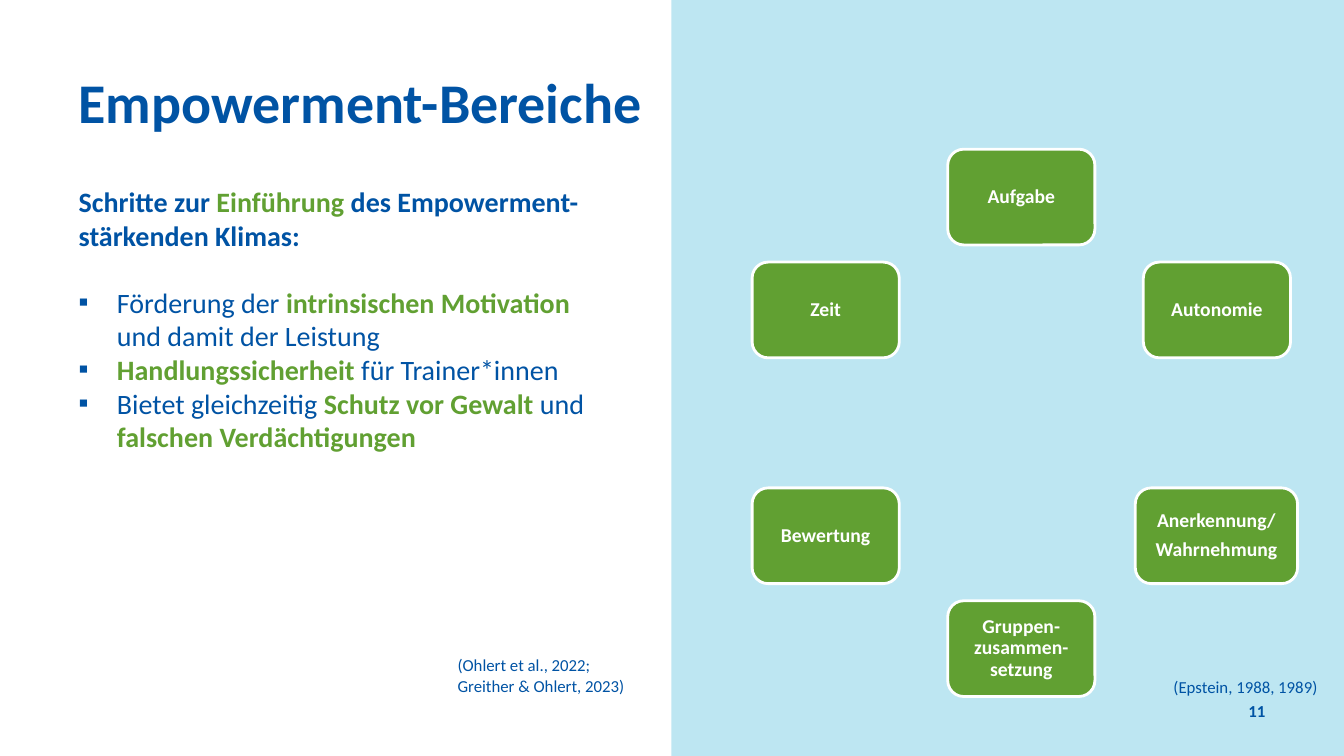
from math import cos, radians, sin

from lxml.etree import SubElement
from pptx import Presentation
from pptx.dml.color import RGBColor
from pptx.enum.shapes import MSO_SHAPE
from pptx.enum.text import MSO_ANCHOR, MSO_AUTO_SIZE, PP_ALIGN
from pptx.oxml.ns import qn
from pptx.util import Pt

PX = 9144  # 100 px to the inch
BLUE, GREEN, PALE, WHITE = "0053A4", "61A032", "BDE6F2", "FFFFFF"


def colour(value):
    return RGBColor.from_string(value)


def px(*lengths):
    return [round(length) * PX for length in lengths]


class SlideBuilder:
    font = "Calibri"

    def __init__(self, deck):
        self.page = deck.slides.add_slide(deck.slide_layouts[1])

    def style(self, para, size, ink=BLUE, bold=False, align=PP_ALIGN.LEFT):
        para.alignment = align
        para.font.name = self.font
        para.font.size = Pt(size)
        para.font.bold = bold
        para.font.color.rgb = colour(ink)

    def place(self, shape, area):
        shape.left, shape.top, shape.width, shape.height = px(*area)
        shape.text_frame.auto_size = MSO_AUTO_SIZE.NONE

    def panel(self, area):
        panel = self.page.shapes.add_shape(MSO_SHAPE.RECTANGLE, *px(*area))
        panel.shadow.inherit = False
        panel.fill.solid()
        panel.fill.fore_color.rgb = colour(PALE)
        panel.line.fill.background()
        self.page.shapes._spTree.insert(2, panel._element)  # behind the placeholders

    def title(self, text, area):
        title = self.page.shapes.title
        self.place(title, area)
        title.text_frame.text = text
        title.text_frame.vertical_anchor = MSO_ANCHOR.MIDDLE
        self.style(title.text_frame.paragraphs[0], 40, bold=True)

    def bullet(self, para, indent=38):
        props = para._p.get_or_add_pPr()
        props.set("marL", str(indent * PX))
        props.set("indent", str(-indent * PX))
        SubElement(SubElement(props, qn("a:buClr")), qn("a:srgbClr")).set("val", BLUE)
        SubElement(props, qn("a:buFont")).set("typeface", self.font)
        SubElement(props, qn("a:buChar")).set("char", "▪")

    def body(self, heading, items, area):
        body = self.page.placeholders[1]
        self.place(body, area)
        frame = body.text_frame
        frame.vertical_anchor = MSO_ANCHOR.TOP
        for index, spans in enumerate([heading, *items]):
            para = frame.add_paragraph() if index else frame.paragraphs[0]
            if index:
                self.bullet(para)
            else:
                props = para._p.get_or_add_pPr()
                props.set("marL", "0")
                props.set("indent", "0")
                SubElement(props, qn("a:buNone"))
            para.space_before = Pt(24 if index == 1 else 0)
            para.space_after = Pt(0)
            para.line_spacing = 1.0
            self.style(para, 20)
            for text, accent in spans:
                span = para.add_run()
                span.text = text
                span.font.bold = accent or index == 0
                span.font.color.rgb = colour(GREEN if accent else BLUE)

    def card(self, lines, centre_x, centre_y, width, height=95):
        card = self.page.shapes.add_shape(
            MSO_SHAPE.ROUNDED_RECTANGLE,
            *px(centre_x - width / 2, centre_y - height / 2, width, height))
        card.shadow.inherit = False
        card.fill.solid()
        card.fill.fore_color.rgb = colour(GREEN)
        card.line.color.rgb = colour(WHITE)
        card.line.width = Pt(2)
        frame = card.text_frame
        frame.word_wrap = True
        frame.vertical_anchor = MSO_ANCHOR.MIDDLE
        frame.margin_left = frame.margin_right = 10 * PX
        frame.margin_top = frame.margin_bottom = 10 * PX
        frame.text = lines
        for para in frame.paragraphs:
            para.line_spacing = 0.9
            para.space_after = Pt(5.9)
            self.style(para, 14, WHITE, True, PP_ALIGN.CENTER)

    def note(self, lines, area, **style):
        box = self.page.shapes.add_textbox(*px(*area))
        frame = box.text_frame
        frame.word_wrap = True
        frame.text = lines
        for para in frame.paragraphs:
            self.style(para, 12, **style)
        return box


def main():
    deck = Presentation()
    deck.slide_width, deck.slide_height = px(1333, 750)
    slide = SlideBuilder(deck)

    # Right half, title and list
    slide.panel((666, 0, 667, 750))
    slide.title("Empowerment-Bereiche", (68, 45, 1076, 110))
    slide.body(
        [("Schritte zur ", False), ("Einführung", True),
         (" des Empowerment-stärkenden Klimas:", False)],
        [[("Förderung der ", False), ("intrinsischen Motivation ", True),
          ("und damit der Leistung", False)],
         [("Handlungssicherheit", True), (" für Trainer*innen", False)],
         [("Bietet gleichzeitig ", False), ("Schutz vor Gewalt ", True),
          ("und ", False), ("falschen Verdächtigungen", True)]],
        (68, 178, 534, 487))

    # Ring of areas, clockwise from the top
    areas = [("Aufgabe", 146), ("Autonomie", 146), ("Anerkennung/\nWahrnehmung", 161),
             ("Gruppen-zusammen-setzung", 146), ("Bewertung", 146), ("Zeit", 146)]
    for index, (label, width) in enumerate(areas):
        angle = radians(index * 360 / len(areas) - 90)
        slide.card(label, 1013 + 224 * cos(angle), 419.5 + 224 * sin(angle), width)

    # Sources and page number
    slide.note("(Ohlert et al., 2022;\nGreither & Ohlert, 2023)", (444, 645, 257, 50))
    slide.note("(Epstein, 1988, 1989)", (1154, 666, 179, 30))
    number = slide.note("11", (1192, 690, 73, 31), bold=True, align=PP_ALIGN.RIGHT)
    number.text_frame.vertical_anchor = MSO_ANCHOR.MIDDLE

    deck.save("out.pptx")


if __name__ == "__main__":
    main()
